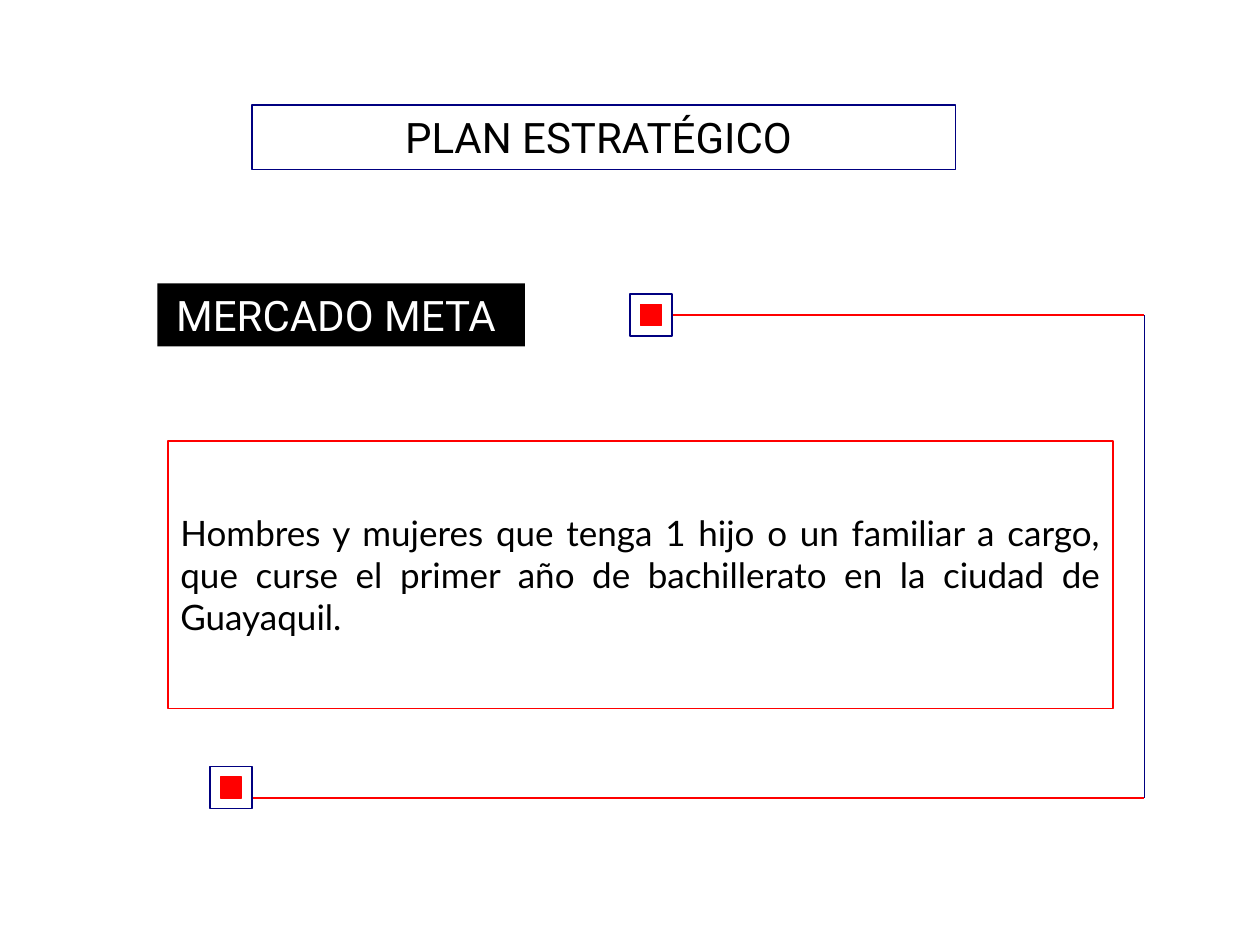
from dataclasses import dataclass

import pptx
import pptx.dml.color
import pptx.enum.shapes
import pptx.enum.text
import pptx.oxml.ns
import pptx.util
from lxml import etree

Pt = pptx.util.Pt
RGB = pptx.dml.color.RGBColor
ALIGN = pptx.enum.text.PP_ALIGN


@dataclass(frozen=True)
class Theme:
    black: RGB = RGB(0, 0, 0)
    white: RGB = RGB(255, 255, 255)
    red: RGB = RGB(255, 0, 0)
    navy: RGB = RGB(0, 0, 128)
    heading_font: str = "Roboto"
    body_font: str = "Lato"
    heading_size: float = 24
    body_size: float = 20
    line_width: float = 0.75


THEME = Theme()


def add_box(shapes, box, fill=None, line=None):
    rect = shapes.add_shape(pptx.enum.shapes.MSO_SHAPE.RECTANGLE, *map(Pt, box))
    rect.shadow.inherit = False
    if fill is None:
        rect.fill.background()
    else:
        rect.fill.solid()
        rect.fill.fore_color.rgb = fill
    if line is None:
        rect.line.fill.background()
    else:
        rect.line.color.rgb = line
        rect.line.width = Pt(THEME.line_width)
    return rect


def write_text(rect, text, align, font, size, color):
    frame = rect.text_frame
    frame.word_wrap = True
    frame.vertical_anchor = pptx.enum.text.MSO_ANCHOR.MIDDLE
    paragraph = frame.paragraphs[0]
    paragraph.text = text
    paragraph.alignment = align
    paragraph.font.name = font
    paragraph.font.size = Pt(size)
    paragraph.font.color.rgb = color


def add_heading(slide, box, text, color, fill=None, line=None):
    heading = add_box(slide.shapes, box, fill, line)
    write_text(heading, text, ALIGN.CENTER, THEME.heading_font, THEME.heading_size, color)


def add_target_market(slide, box, text):
    market = add_box(slide.shapes, box, line=THEME.red)
    write_text(market, text, ALIGN.JUSTIFY, THEME.body_font, THEME.body_size, THEME.black)


def add_rule(slide, start, end, color):
    rule = slide.shapes.add_connector(
        pptx.enum.shapes.MSO_CONNECTOR.STRAIGHT, *map(Pt, start + end))
    rule.line.color.rgb = color
    rule.line.width = Pt(THEME.line_width)
    properties = rule._element.spPr
    etree.SubElement(properties, pptx.oxml.ns.qn("a:effectLst"))


def add_marker(slide, left, top, side):
    """Red square centred in a navy outline."""
    marker = slide.shapes.add_group_shape().shapes
    inset = side / 4
    core = (left + inset, top + inset, side / 2, side / 2)
    add_box(marker, core, THEME.red, THEME.red)
    add_box(marker, (left, top, side, side), line=THEME.navy)


def add_bracket(slide, box, lower_left, side):
    """Three rules around the right side, with a marker at each open end."""
    left, top, width, height = box
    right, bottom = left + width, top + height
    add_rule(slide, (left + side, top), (right, top), THEME.red)
    add_rule(slide, (right, top), (right, bottom), THEME.navy)
    add_rule(slide, (lower_left + side, bottom), (right, bottom), THEME.red)
    add_marker(slide, left, top - side / 2, side)
    add_marker(slide, lower_left, bottom - side * 3 / 4, side)


def main():
    deck = pptx.Presentation()
    deck.slide_width, deck.slide_height = Pt(720), Pt(540)
    slide = deck.slides.add_slide(deck.slide_layouts[6])
    add_heading(slide, (144, 60, 402, 36.75), "PLAN ESTRATÉGICO ",
                THEME.black, line=THEME.navy)
    add_heading(slide, (90, 162, 210, 36), "MERCADO META ",
                THEME.white, fill=THEME.black)
    add_bracket(slide, (360, 180, 294, 276), lower_left=120, side=24)
    add_target_market(
        slide, (96, 252, 540, 152.75),
        "Hombres y mujeres que tenga 1 hijo o un familiar a cargo, que curse "
        "el primer año de bachillerato en la ciudad de Guayaquil.")
    deck.save("out.pptx")


if __name__ == "__main__":
    main()
